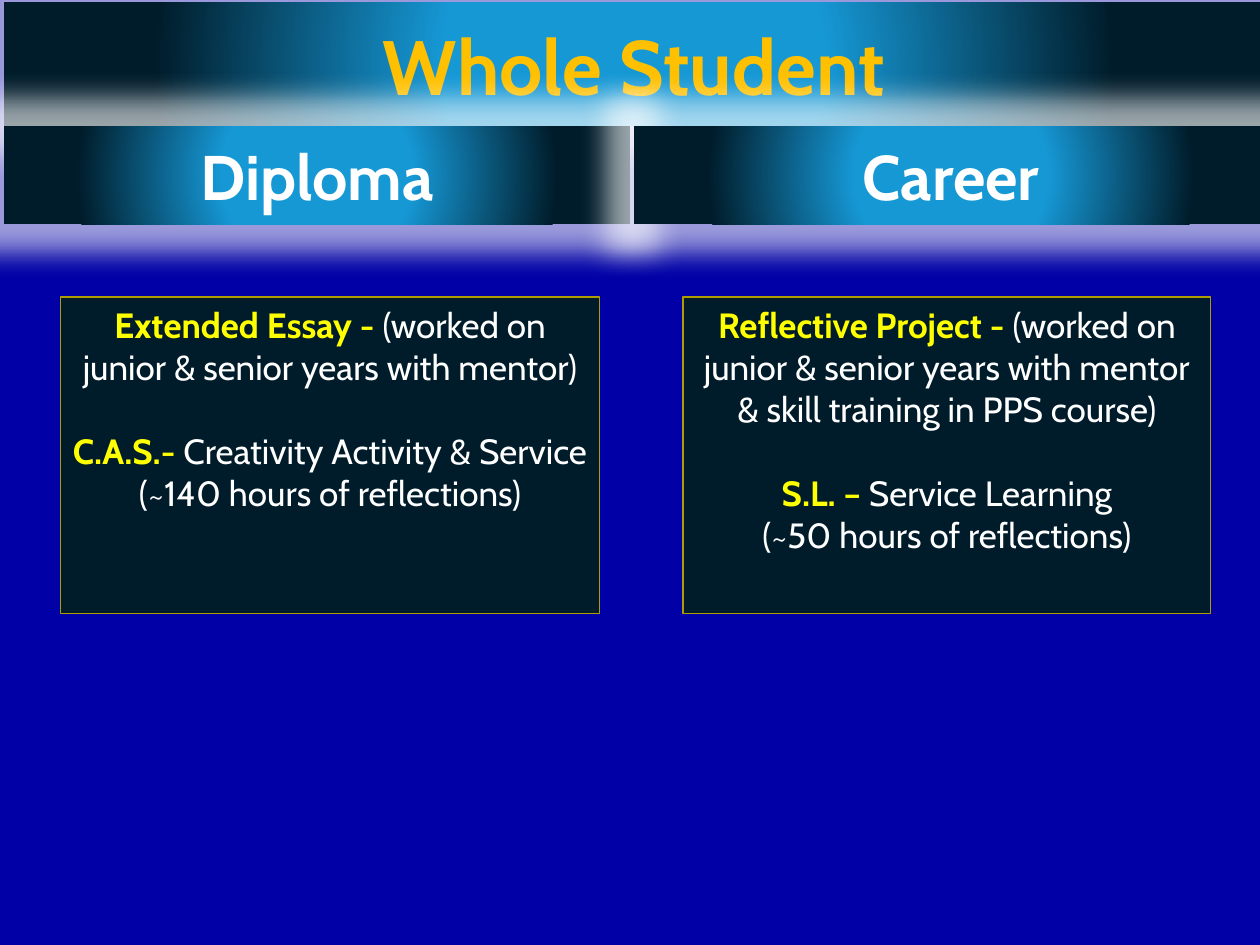
"""Build the Whole Student slide comparing the Diploma and Career paths."""
from pptx import Presentation
from pptx.dml.color import RGBColor as Rgb
from pptx.enum.text import MSO_ANCHOR as Anchor, MSO_AUTO_SIZE as Fit, PP_ALIGN as Align
from pptx.oxml import parse_xml
from pptx.oxml.ns import nsdecls
from pptx.util import Cm, Pt

HUES = {"back": "0000A6", "blue": "1698D5", "dark": "001C2A", "gold": "FFC000",
        "edge": "AD9D01", "lemon": "FFFF00", "white": "FFFFFF"}

HEADS = [
    (0, "Whole Student", 44, "gold", (0.08, 0.05, 25.4, 2.49)),
    (1, "Diploma", 36, "white", (0.08, 2.54, 12.62, 1.98)),
    (3, "Career", 36, "white", (12.78, 2.54, 12.78, 1.98)),
]
CARDS = [
    (2, (1.22, 5.99, 10.87, 6.38), [
        ("Extended Essay -", " (worked on junior & senior years with mentor)"),
        ("C.A.S.-", " Creativity Activity & Service (~140 hours of reflections)"),
    ]),
    (4, (13.77, 5.99, 10.64, 6.38), [
        ("Reflective Project - ", "(worked on junior & senior years with mentor "
                                  "& skill training in PPS course)"),
        ("S.L. –", " Service Learning"),
        ("", "(~50 hours of reflections)"),
    ]),
]
STOPS = [(30, "blue"), (76, "dark"), (100, "dark")]
FRAME = {"word_wrap": True, "auto_size": Fit.NONE,
         "margin_left": Cm(0.25), "margin_right": Cm(0.25),
         "margin_top": Cm(0.13), "margin_bottom": Cm(0.13)}
PARA = {"alignment": Align.CENTER, "line_spacing": 1.0,
        "space_before": Pt(0), "space_after": Pt(0)}


def assign(item, vals):
    for key, val in vals.items():
        setattr(item, key, val)


def hue(name):
    return Rgb.from_string(HUES[name])


def place(shape, box, anchor):
    assign(shape, dict(zip(("left", "top", "width", "height"), map(Cm, box))))
    assign(shape.text_frame, {**FRAME, "vertical_anchor": anchor})


def write(para, text, size, name, bold):
    run = para.add_run()
    run.text = text
    assign(run.font, {"name": "Cabin", "size": Pt(size), "bold": bold})
    run.font.color.rgb = hue(name)


def shine(shape):
    ns = nsdecls("a")
    stops = "".join(f'<a:gs pos="{pos * 1000}"><a:srgbClr val="{HUES[name]}"/></a:gs>'
                    for pos, name in STOPS)
    grad = (f'<a:gradFill {ns} rotWithShape="1"><a:gsLst>{stops}</a:gsLst>'
            '<a:path path="circle"><a:fillToRect l="50000" t="50000" r="50000" b="50000"/>'
            '</a:path></a:gradFill>')
    glow = (f'<a:effectLst {ns}><a:glow rad="{Cm(1.12)}"><a:srgbClr val="{HUES["white"]}">'
            '<a:alpha val="60000"/></a:srgbClr></a:glow></a:effectLst>')
    for xml in (grad, glow):
        shape.element.spPr.append(parse_xml(xml))


def main():
    deck = Presentation()
    assign(deck, {"slide_width": Cm(25.4), "slide_height": Cm(19.05)})
    slide = deck.slides.add_slide(deck.slide_layouts[4])
    slide.background.fill.solid()
    slide.background.fill.fore_color.rgb = hue("back")
    slots = {slot.placeholder_format.idx: slot for slot in slide.placeholders}

    for idx, text, size, name, box in HEADS:
        head = slots[idx]
        place(head, box, Anchor.MIDDLE)
        shine(head)
        para = head.text_frame.paragraphs[0]
        assign(para, PARA)
        write(para, text, size, name, True)

    for idx, box, items in CARDS:
        card = slots[idx]
        place(card, box, Anchor.TOP)
        card.fill.solid()
        card.fill.fore_color.rgb = hue("dark")
        card.line.color.rgb = hue("edge")
        card.line.width = Pt(0.75)
        frame = card.text_frame
        for row, (label, text) in enumerate(items):
            para = frame.add_paragraph() if row else frame.paragraphs[0]
            props = para._p.get_or_add_pPr()
            assign(para, PARA)
            props.set("marL", "0")
            props.set("indent", "0")
            props.append(parse_xml(f'<a:buNone {nsdecls("a")}/>'))
            if label:
                para.space_before = Pt(24 if row else 0)
                write(para, label, 20, "lemon", True)
            write(para, text, 20, "white", False)

    deck.save("out.pptx")


if __name__ == "__main__":
    main()
